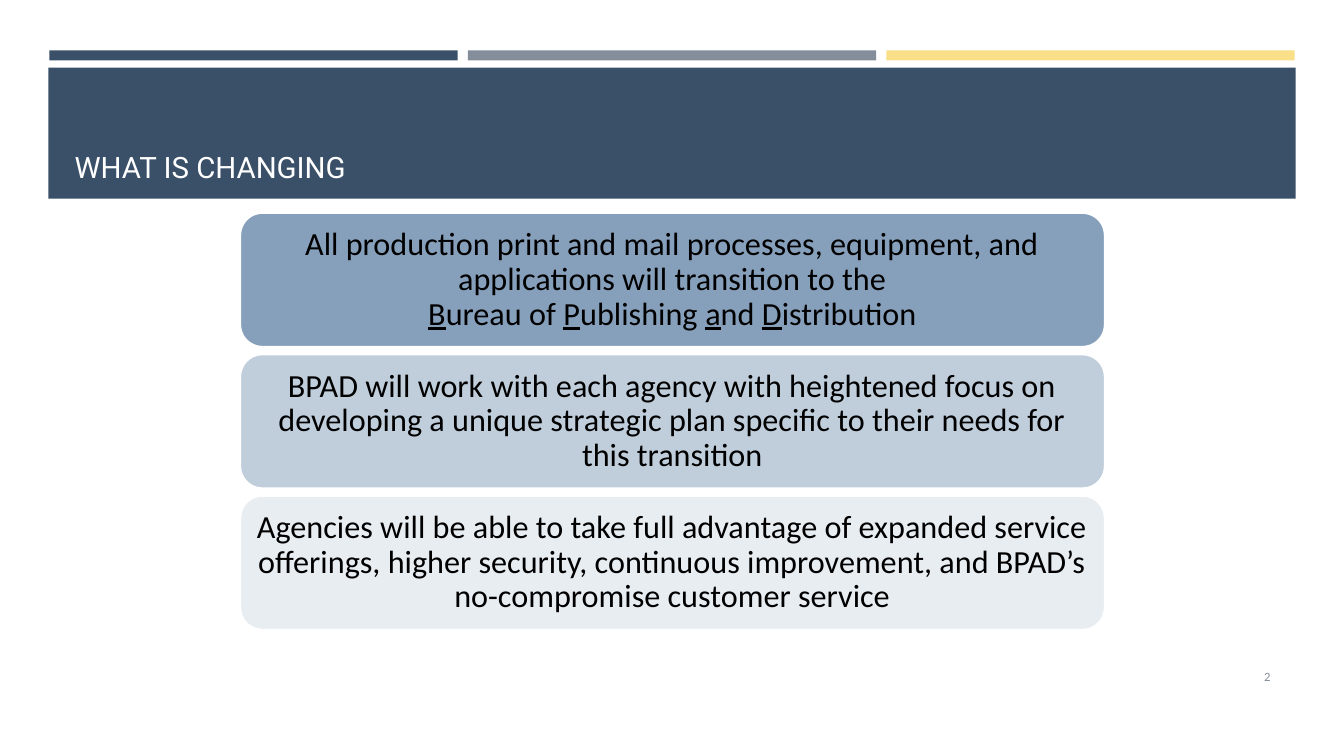
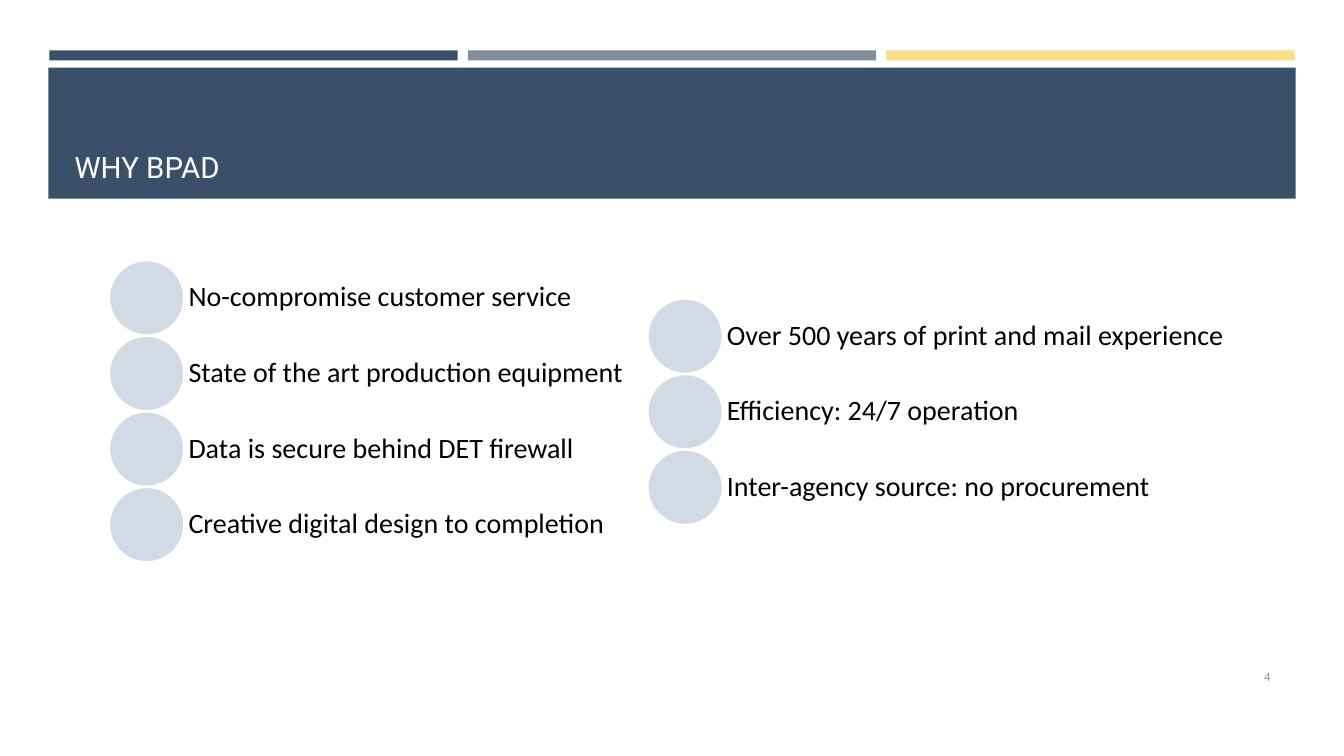
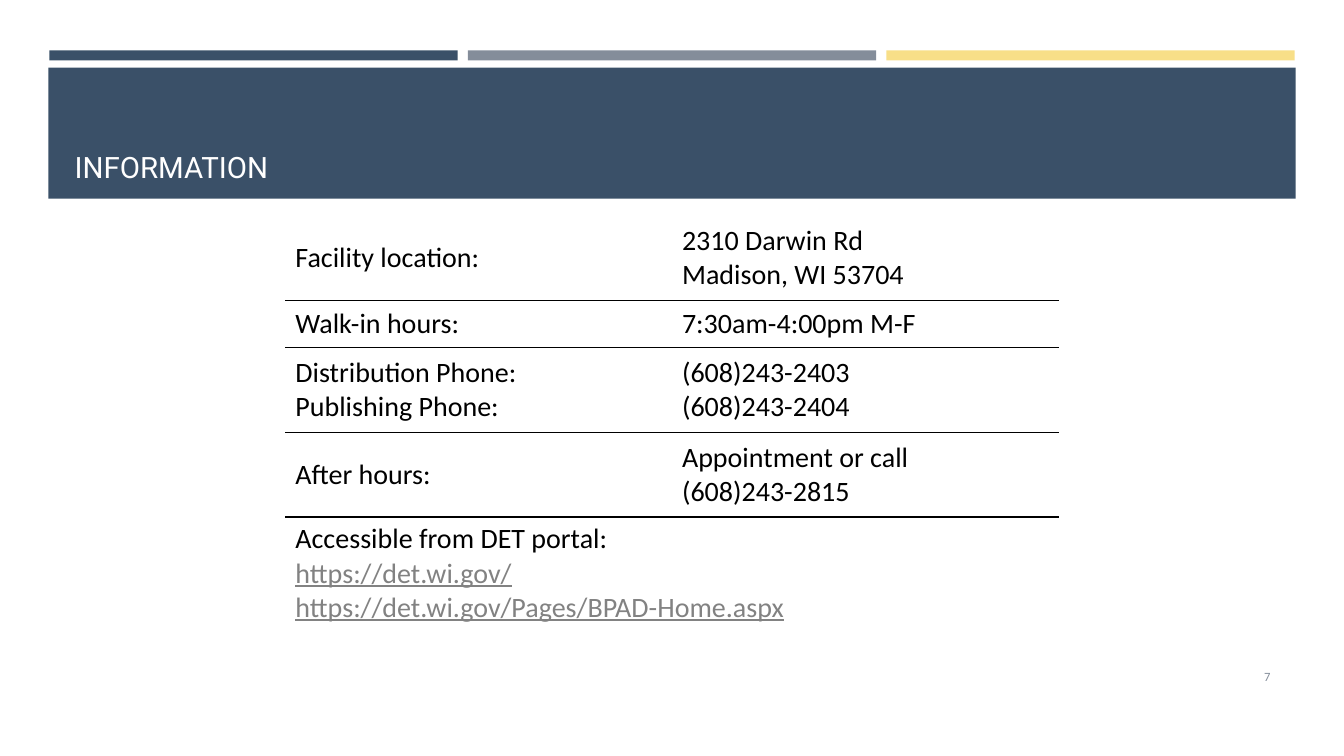
from lxml.etree import SubElement
from pptx import Presentation
from pptx.dml.color import RGBColor
from pptx.enum.shapes import MSO_SHAPE
from pptx.enum.text import MSO_ANCHOR, MSO_AUTO_SIZE, PP_ALIGN
from pptx.oxml.ns import qn
from pptx.util import Inches, Pt

NAVY = RGBColor(0x3A, 0x50, 0x68)
SLATE = RGBColor(0x84, 0x8D, 0x9A)
YELLOW = RGBColor(0xF8, 0xDF, 0x88)
STEEL = RGBColor(0x79, 0x95, 0xB4)
MIST = RGBColor(0xA6, 0xB9, 0xCD)
PALE = RGBColor(0xD2, 0xDC, 0xE6)
LINK_GRAY = RGBColor(0x82, 0x82, 0x82)
WHITE = RGBColor(0xFF, 0xFF, 0xFF)
BLACK = RGBColor(0, 0, 0)
TITLE_FONT, BODY_FONT = "Roboto", "Calibri"
NO_TABLE_STYLE = "{2D5ABB26-0587-4C30-8999-92F81FD0307C}"

CHANGES = [
    (STEEL, 90, [
        ["All production print and mail processes, equipment, and applications "
         "will transition to the"],
        ["_B", "ureau of ", "_P", "ublishing ", "_a", "nd ", "_D", "istribution"]]),
    (MIST, 70, [
        ["BPAD will work with each agency with heightened focus on developing "
         "a unique strategic plan specific to their needs for this transition"]]),
    (PALE, 50, [
        ["Agencies will be able to take full advantage of expanded service "
         "offerings, higher security, continuous improvement, and BPAD’s "
         "no-compromise customer service"]]),
]
SERVICE_REASONS = ["No-compromise customer service",
                   "State of the art production equipment",
                   "Data is secure behind DET firewall",
                   "Creative digital design to completion"]
OPERATION_REASONS = ["Over 500 years of print and mail experience",
                     "Efficiency: 24/7 operation",
                     "Inter-agency source: no procurement"]
CONTACTS = [
    (0.84, ["Facility location:"], ["2310 Darwin Rd", "Madison, WI 53704"]),
    (0.47, ["Walk-in hours:"], ["7:30am-4:00pm M-F"]),
    (0.84, ["Distribution Phone:", "Publishing Phone:"],
     ["(608)243-2403", "(608)243-2404"]),
    (0.84, ["After hours:"], ["Appointment or call", "(608)243-2815"]),
    (1.21, ["Accessible from DET portal:", "_https://det.wi.gov/",
            "_https://det.wi.gov/Pages/BPAD-Home.aspx"], None),
]


def box(left, top, width, height):
    return [Inches(length) for length in (left, top, width, height)]


def add_run(paragraph, text, size, color=BLACK, font=BODY_FONT, underline=False):
    run = paragraph.add_run()
    run.text = text
    run.font.size = Pt(size)
    run.font.name = font
    run.font.color.rgb = color
    if underline:
        run.font.underline = True


def write(frame, paragraphs, size, color=BLACK, align=PP_ALIGN.LEFT,
          spacing=1.0, underlined_color=BLACK):
    frame.word_wrap = True
    for index, parts in enumerate(paragraphs):
        paragraph = frame.add_paragraph() if index else frame.paragraphs[0]
        paragraph.alignment = align
        paragraph.line_spacing = spacing
        for part in parts:
            marked = part.startswith("_")
            add_run(paragraph, part.removeprefix("_"), size,
                    underlined_color if marked else color, underline=marked)


def set_margins(frame, horizontal, vertical):
    frame.margin_left = frame.margin_right = Inches(horizontal)
    frame.margin_top = frame.margin_bottom = Inches(vertical)


def add_filled(slide, preset, area, color, opacity=100, outlined=False):
    shape = slide.shapes.add_shape(preset, *box(*area))
    shape.shadow.inherit = False
    shape.fill.solid()
    shape.fill.fore_color.rgb = color
    if opacity < 100:
        tint = shape._element.spPr.find(qn("a:solidFill"))[0]
        SubElement(tint, qn("a:alpha")).set("val", str(opacity * 1000))
    if outlined:
        shape.line.color.rgb = WHITE
        shape.line.width = Pt(1.75)
    else:
        shape.line.fill.background()
    return shape


def add_text_box(slide, area):
    frame = slide.shapes.add_textbox(*box(*area)).text_frame
    frame.vertical_anchor = MSO_ANCHOR.MIDDLE
    return frame


def dress_layout(layout, slide):
    areas = [((0.49 + 4.15 * column, 0.5, 4.05, 0.1), color)
             for column, color in enumerate((NAVY, SLATE, YELLOW))]
    areas.append(((0.48, 0.67, 12.37, 1.3), NAVY))
    for index, (area, color) in enumerate(areas):
        band = add_filled(slide, MSO_SHAPE.RECTANGLE, area, color)._element
        band.nvSpPr.cNvPr.set("id", str(100 + index))
        layout.shapes._spTree.insert(2 + index, band)
    title = layout.placeholders[0]
    title.left, title.top, title.width, title.height = box(0.64, 0.77, 12.06, 1.11)
    title.text_frame.vertical_anchor = MSO_ANCHOR.BOTTOM


def add_headed_slide(deck, layout, heading, number):
    slide = deck.slides.add_slide(layout)
    title = slide.shapes.title.text_frame
    title.auto_size = MSO_AUTO_SIZE.NONE
    title.vertical_anchor = MSO_ANCHOR.BOTTOM
    title.paragraphs[0].alignment = PP_ALIGN.LEFT
    add_run(title.paragraphs[0], heading, 21, WHITE, TITLE_FONT)
    page = add_text_box(slide, (11.55, 6.51, 1.15, 0.4))
    write(page, [[number]], 9, SLATE, PP_ALIGN.RIGHT)
    return slide


def add_change_cards(slide, left, top, width, height, gap=0.07):
    card_height = (height - gap * (len(CHANGES) - 1)) / len(CHANGES)
    for row, (color, opacity, paragraphs) in enumerate(CHANGES):
        area = (left, top + row * (card_height + gap), width, card_height)
        card = add_filled(slide, MSO_SHAPE.ROUNDED_RECTANGLE, area,
                          color, opacity, outlined=True)
        set_margins(card.text_frame, 0.1, 0.1)
        card.text_frame.vertical_anchor = MSO_ANCHOR.MIDDLE
        write(card.text_frame, paragraphs, 23, align=PP_ALIGN.CENTER, spacing=0.9)


def add_reasons(slide, reasons, left, top, width, pitch=0.75):
    indent = pitch + 0.04
    for row, reason in enumerate(reasons):
        y = top + row * pitch
        add_filled(slide, MSO_SHAPE.OVAL, (left, y, pitch, pitch), MIST, 50, True)
        label = add_text_box(slide, (left + indent, y, width - indent, pitch))
        set_margins(label, 0, 0.03)
        write(label, [[reason]], 20, spacing=0.9)


def underline_cell(cell):
    border = SubElement(cell._tc.get_or_add_tcPr(), qn("a:lnB"))
    border.set("w", str(Pt(1)))
    fill = SubElement(border, qn("a:solidFill"))
    SubElement(fill, qn("a:srgbClr")).set("val", str(BLACK))


def add_contacts(slide, left, top, width):
    heights = [height for height, _, _ in CONTACTS]
    table = slide.shapes.add_table(
        len(CONTACTS), 2, *box(left, top, width, sum(heights))).table
    table.first_row = table.horz_banding = False
    table._tbl.tblPr.find(qn("a:tableStyleId")).text = NO_TABLE_STYLE
    last = len(CONTACTS) - 1
    table.cell(last, 0).merge(table.cell(last, 1))
    for row, (height, *entries) in enumerate(CONTACTS):
        table.rows[row].height = Inches(height)
        for column, lines in enumerate(entries):
            cell = table.cell(row, column)
            if row < last:
                underline_cell(cell)
                cell.vertical_anchor = MSO_ANCHOR.MIDDLE
            cell.fill.background()
            if lines:
                write(cell.text_frame, [[line] for line in lines], 20,
                      underlined_color=LINK_GRAY)


def main():
    deck = Presentation()
    deck.slide_width, deck.slide_height = Inches(13.33), Inches(7.5)
    layout = deck.slide_layouts[5]

    changing = add_headed_slide(deck, layout, "WHAT IS CHANGING", "2")
    dress_layout(layout, changing)
    add_change_cards(changing, 2.38, 2.11, 8.58, 4.14)

    why = add_headed_slide(deck, layout, "WHY BPAD", "4")
    add_reasons(why, SERVICE_REASONS, 1.08, 2.58, 6.42)
    add_reasons(why, OPERATION_REASONS, 6.42, 2.96, 6.42)

    information = add_headed_slide(deck, layout, "INFORMATION", "7")
    add_contacts(information, 2.83, 2.14, 7.67)

    deck.save("out.pptx")


if __name__ == "__main__":
    main()
